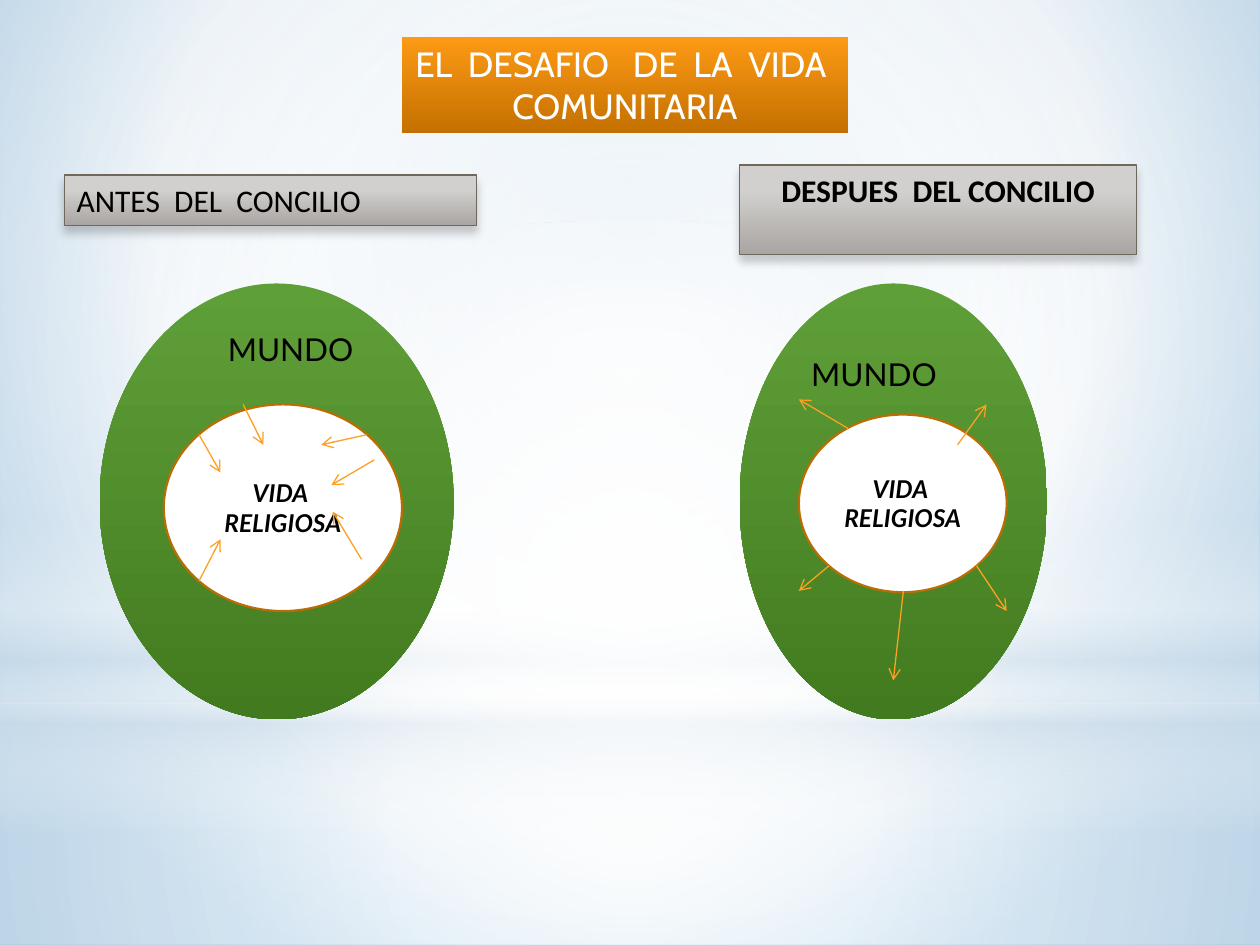
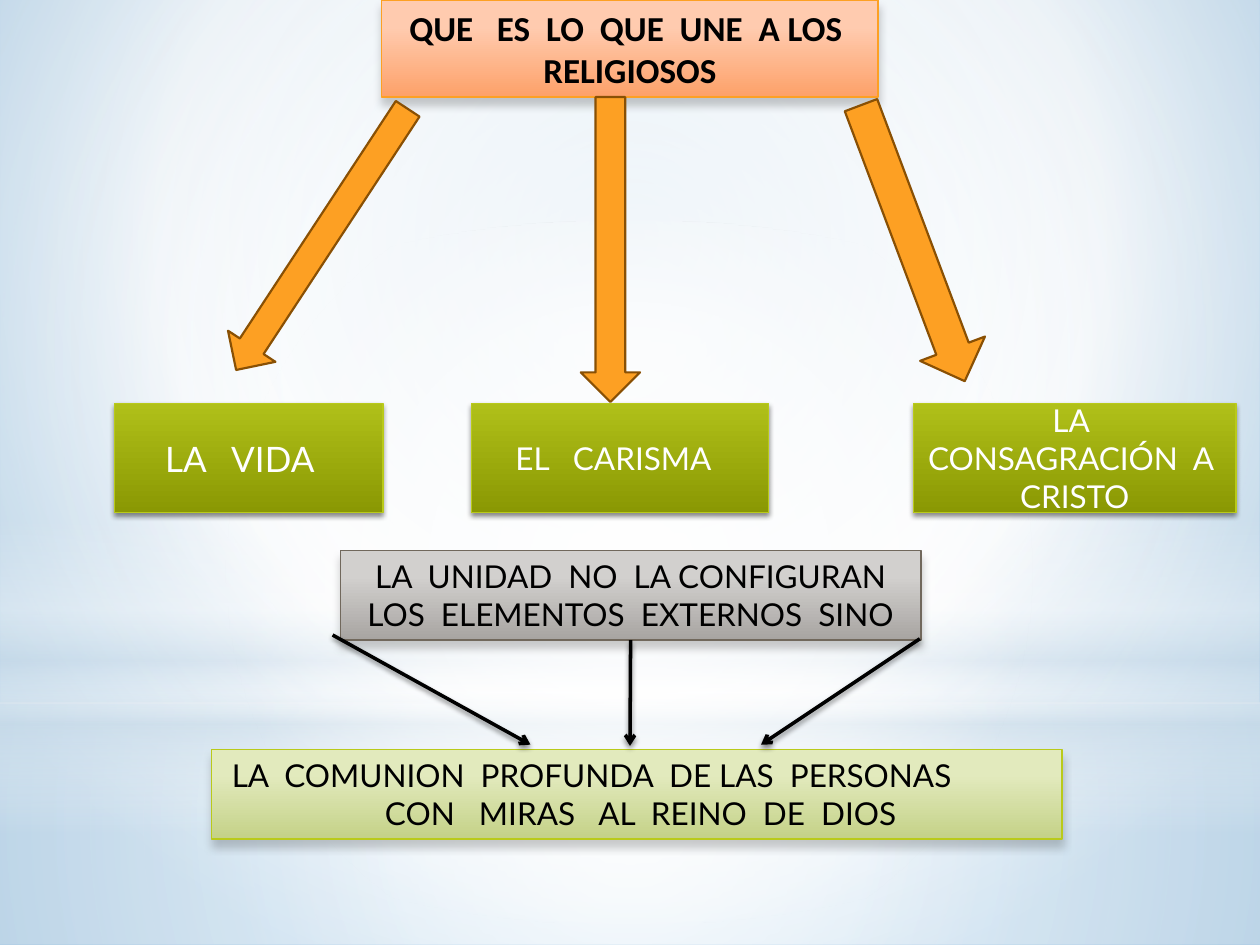
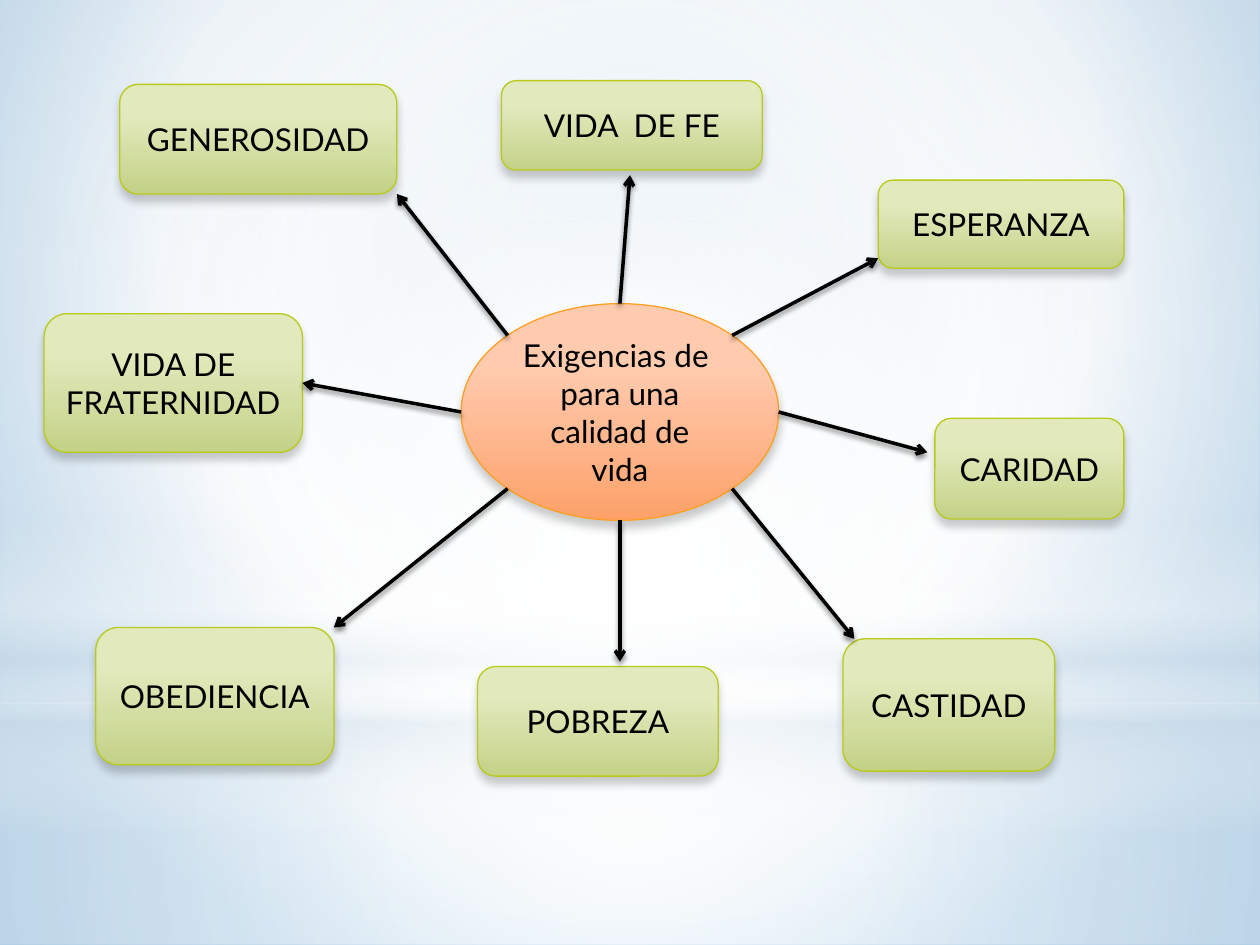
import math

import lxml.etree
import pptx
import pptx.dml.color
import pptx.enum.shapes
import pptx.enum.text
import pptx.oxml
import pptx.oxml.ns
import pptx.util

Inches = pptx.util.Inches
Pt = pptx.util.Pt
RGB = pptx.dml.color.RGBColor.from_string
Kind = pptx.enum.shapes.MSO_SHAPE
Anchor = pptx.enum.text.MSO_ANCHOR
qn = pptx.oxml.ns.qn
NS = pptx.oxml.ns.nsdecls("a")


class Theme:
    black, white, orange = "000000", "FFFFFF", "FDA023"
    body, head, title = "Lato", "Calibri", "Cabin"
    small, normal, large = 14, 18, 20
    haze = "CCDDEA"
    aligns = {"l": pptx.enum.text.PP_ALIGN.LEFT, "c": pptx.enum.text.PP_ALIGN.CENTER}
    # Shadow: opacity in percent, blur and distance in points
    soft, firm = (20, 5, 4), (45, 3.1, 1.8)
    # Look: fill colour or gradient stops, line colour, line width, shadow
    looks = {
        "title": ([(0, "FD9A15"), (100, "C47000")], None, 0, None),
        "world": ([(0, "5F9F38"), (100, "427B1F")], None, 0, None),
        "core": (white, "B96D05", 1.25, None),
        "grey": ([(28, "D2D0CE"), (100, "A8A5A2")], "71685C", 0.75, soft),
        "peach": ([(28, "FFCBAF"), (100, "FDA169")], orange, 0.75, soft),
        "lime": ([(28, "E2EABD"), (100, "C4D187")], "B9CA1A", 0.75, soft),
        "olive": ([(0, "B0C019"), (100, "8A9803")], "B9CA1A", 0.75, firm),
        "arrow": (orange, "895004", 1.25, None),
        "plain": (None, None, 0, None),
    }
    # Connector: colour, width, shadow
    thin, thick = (orange, 0.75, None), (black, 2, firm)


def effect(shadow):
    inner = ""
    if shadow:
        alpha, blur, dist = shadow
        inner = (f'<a:outerShdw blurRad="{Pt(blur)}" dist="{Pt(dist)}" dir="5400000" rotWithShape="0">'
                 f'<a:srgbClr val="{Theme.black}"><a:alpha val="{alpha * 1000}"/></a:srgbClr></a:outerShdw>')
    return pptx.oxml.parse_xml(f"<a:effectLst {NS}>{inner}</a:effectLst>")


def box(slide, kind, at, look, text="", size=Theme.normal, face=Theme.body, ink=Theme.black,
        aligns="c", top=False, bold=False, italic=False, turn=0, pad=(0.1, 0.1)):
    fill, edge, width, shadow = Theme.looks[look]
    place = [Inches(n) for n in at]
    shape = slide.shapes.add_shape(kind, *place) if kind else slide.shapes.add_textbox(*place)
    shape.rotation = turn
    if isinstance(fill, list):
        shape.fill.gradient()
        shape.fill.gradient_angle = 270
        for stop, (spot, colour) in zip(shape.fill.gradient_stops, fill):
            stop.color.rgb = RGB(colour)
            stop.position = spot / 100
    elif fill:
        shape.fill.solid()
        shape.fill.fore_color.rgb = RGB(fill)
    else:
        shape.fill.background()
    if edge:
        shape.line.color.rgb = RGB(edge)
        shape.line.width = Pt(width)
    else:
        shape.line.fill.background()
    shape.element.spPr.append(effect(shadow))
    if text:
        frame = shape.text_frame
        frame.word_wrap = True
        frame.vertical_anchor = Anchor.TOP if top else Anchor.MIDDLE
        frame.margin_left, frame.margin_right = [Inches(n) for n in pad]
        frame.text = text
        for para, align in zip(frame.paragraphs, aligns):
            para.alignment = Theme.aligns[align]
            font = para.font
            font.name, font.size, font.bold, font.italic = face, Pt(size), bold, italic
            font.color.rgb = RGB(ink)
    return shape


deck = pptx.Presentation()
deck.slide_width, deck.slide_height = Inches(10), Inches(7.5)
life, union, needs = [deck.slides.add_slide(deck.slide_layouts[6]) for _ in range(3)]

# Shared backdrop on the master: stops are position, colour, opacity
master = deck.slide_master
master.background.fill.background()
white, haze = Theme.white, Theme.haze
fade = [(0, white, 0), (29, white, 30), (45, haze, 40), (55, white, 26), (65, haze, 60), (100, white, 0)]
mid = (50, 50, 50, 50)
layers = [
    (None, None, [(0, "BCD5E8", 100), (60, white, 100), (100, "82B6DE", 100)], (20, 10, 20, 60)),
    (Kind.RECTANGLE, (0, 5.58, 10, 1.92), [(0, white, 91), (37, white, 76), (100, haze, 79)], mid),
    (Kind.RECTANGLE, (0, 0, 10, 5.58), [(0, white, 89), (48, white, 62), (100, haze, 79)], mid),
    (Kind.RECTANGLE, (0, 4.12, 10, 2.5), fade, None),
    (Kind.OVAL, (0, 1.75, 10, 5.58), [(0, white, 100), (56, white, 0)], mid),
]
for num, (kind, at, stops, rim) in enumerate(layers):
    if kind:
        shape = box(life, kind, at, "plain")
        shape.element.nvSpPr.cNvPr.set("id", str(20 + num))
        master.element.cSld.spTree.append(shape.element)
        props = shape.element.spPr
    else:
        props = master.element.find(".//" + qn("p:bgPr"))
    marks = "".join(f'<a:gs pos="{spot * 1000}"><a:srgbClr val="{colour}"><a:alpha val="{alpha * 1000}"/>'
                    f"</a:srgbClr></a:gs>" for spot, colour, alpha in stops)
    flow = '<a:lin ang="5400000" scaled="0"/>'
    if rim:
        sides = " ".join(f'{side}="{n * 1000}"' for side, n in zip("ltrb", rim))
        flow = f'<a:path path="circle"><a:fillToRect {sides}/></a:path>'
    grad = pptx.oxml.parse_xml(f'<a:gradFill {NS} rotWithShape="1"><a:gsLst>{marks}</a:gsLst>{flow}</a:gradFill>')
    props.replace(props.find(qn("a:noFill")), grad)

# Slide 1: community life before and after the council
box(life, Kind.RECTANGLE, (3.19, 0.29, 3.54, 0.77), "title", "EL  DESAFIO   DE  LA  VIDA  COMUNITARIA",
    size=Theme.large, face=Theme.title, ink=Theme.white, top=True)
worlds = [
    ((0.79, 2.25, 2.81, 3.46), (1.71, 2.57, 1.26, 0.4), (1.3, 3.21, 1.89, 1.64)),
    ((5.87, 2.25, 2.44, 3.46), (6.34, 2.77, 1.5, 0.4), (6.34, 3.29, 1.65, 1.41)),
]
for world, label, core in worlds:
    box(life, Kind.OVAL, world, "world")
    box(life, None, label, "plain", "MUNDO", aligns="l", top=True)
    box(life, Kind.OVAL, core, "core", "VIDA  RELIGIOSA", size=Theme.small, bold=True, italic=True)
box(life, Kind.RECTANGLE, (0.51, 1.39, 3.27, 0.4), "grey", "ANTES  DEL  CONCILIO",
    face=Theme.head, aligns="l", top=True)
box(life, Kind.RECTANGLE, (5.87, 1.31, 3.15, 0.71), "grey", "DESPUES  DEL CONCILIO",
    face=Theme.head, top=True, bold=True)

# Connectors: slide, style, start, end, joined box at start, joined box at end
inward = [
    ((2.91, 3.45), (2.55, 3.53)), ((1.93, 3.21), (2.09, 3.53)), ((2.87, 4.44), (2.64, 4.06)),
    ((1.58, 4.61), (1.75, 4.28)), ((1.58, 3.45), (1.75, 3.75)), ((2.97, 3.65), (2.63, 3.85)),
]
outward = [
    ((7.17, 4.69), (7.09, 5.4)), ((7.6, 3.53), (7.83, 3.21)), ((6.73, 3.4), (6.34, 3.17)),
    ((7.75, 4.49), (7.99, 4.85)), ((6.58, 4.49), (6.34, 4.69)),
]
links = [(life, Theme.thin, start, end, None, None) for start, end in inward + outward]

# Slide 2: what unites the religious
box(union, Kind.RECTANGLE, (3.03, 0, 3.94, 0.77), "peach", "QUE   ES  LO  QUE  UNE  A LOS  RELIGIOSOS",
    size=Theme.large, face=Theme.head, top=True, bold=True)
for at, turn in [((2.33, 0.66, 0.45, 2.48), 33.3), ((4.61, 0.77, 0.47, 2.42), 0),
                 ((6.97, 0.76, 0.55, 2.34), 339.4)]:
    box(union, Kind.DOWN_ARROW, at, "arrow", turn=turn)
for left, width, text, size, gap in [
        (0.91, 2.13, "LA   VIDA", Theme.large, 0.24), (3.74, 2.36, "EL   CARISMA", Theme.normal, 0.2),
        (7.25, 2.56, "LA  CONSAGRACIÓN  A  CRISTO", Theme.normal, 0.1)]:
    box(union, Kind.RECTANGLE, (left, 3.2, width, 0.87), "olive", text, size=size,
        ink=Theme.white, pad=(0.1, gap))
unity = box(union, Kind.RECTANGLE, (2.7, 4.37, 4.61, 0.71), "grey",
            "LA  UNIDAD  NO  LA CONFIGURAN LOS  ELEMENTOS  EXTERNOS  SINO", top=True)
box(union, Kind.RECTANGLE, (1.68, 5.95, 6.75, 0.71), "lime",
    "LA  COMUNION  PROFUNDA  DE LAS  PERSONAS\nCON   MIRAS   AL  REINO  DE  DIOS",
    aligns="lc", top=True, pad=(0.16, 0.1))
for start, end, source in [((2.64, 5.04), (4.21, 5.91), None), ((5, 5.08), (5, 5.92), (unity, 2)),
                           ((7.3, 5.07), (6.04, 5.91), None)]:
    links.append((union, Theme.thick, start, end, source, None))

# Slide 3: demands around the centre, clockwise from the top
mid_x, mid_y, rad_x, rad_y = 4.92, 3.27, 1.26, 0.86
box(needs, Kind.OVAL, (mid_x - rad_x, mid_y - rad_y, 2 * rad_x, 2 * rad_y), "peach",
    "Exigencias de  para una calidad de vida")
demands = [
    ("VIDA  DE FE", (3.98, 0.64, 2.07, 0.71), (5, 1.39), None),
    ("ESPERANZA", (6.97, 1.43, 1.95, 0.7), (6.97, 2.05), None),
    ("CARIDAD", (7.42, 3.32, 1.5, 0.8), (7.36, 3.59), None),
    ("CASTIDAD", (6.69, 5.07, 1.68, 1.05), (6.78, 5.07), None),
    ("POBREZA", (3.79, 5.29, 1.91, 0.87), (4.92, 5.25), None),
    ("OBEDIENCIA", (0.76, 4.98, 1.89, 1.09), (2.65, 4.98), None),
    ("VIDA DE FRATERNIDAD", (0.35, 2.49, 2.05, 1.1), (2.4, 3.04), 3),
    ("GENEROSIDAD", (0.95, 0.67, 2.2, 0.87), (3.15, 1.54), None),
]
for num, (text, at, tip, side) in enumerate(demands):
    card = box(needs, Kind.ROUNDED_RECTANGLE, at, "lime", text)
    angle = math.radians(45 * num)
    start = (mid_x + rad_x * math.sin(angle), mid_y - rad_y * math.cos(angle))
    links.append((needs, Theme.thick, start, tip, None, (card, side) if side else None))

# Draw all connectors
for slide, (colour, width, shadow), start, end, source, target in links:
    line = slide.shapes.add_connector(pptx.enum.shapes.MSO_CONNECTOR.STRAIGHT,
                                      *[Inches(n) for n in start + end])
    if source:
        line.begin_connect(*source)
    if target:
        line.end_connect(*target)
    line.line.color.rgb = RGB(colour)
    line.line.width = Pt(width)
    lxml.etree.SubElement(line.line._get_or_add_ln(), qn("a:tailEnd"), type="arrow")
    line.element.spPr.append(effect(shadow))

deck.save("out.pptx")
